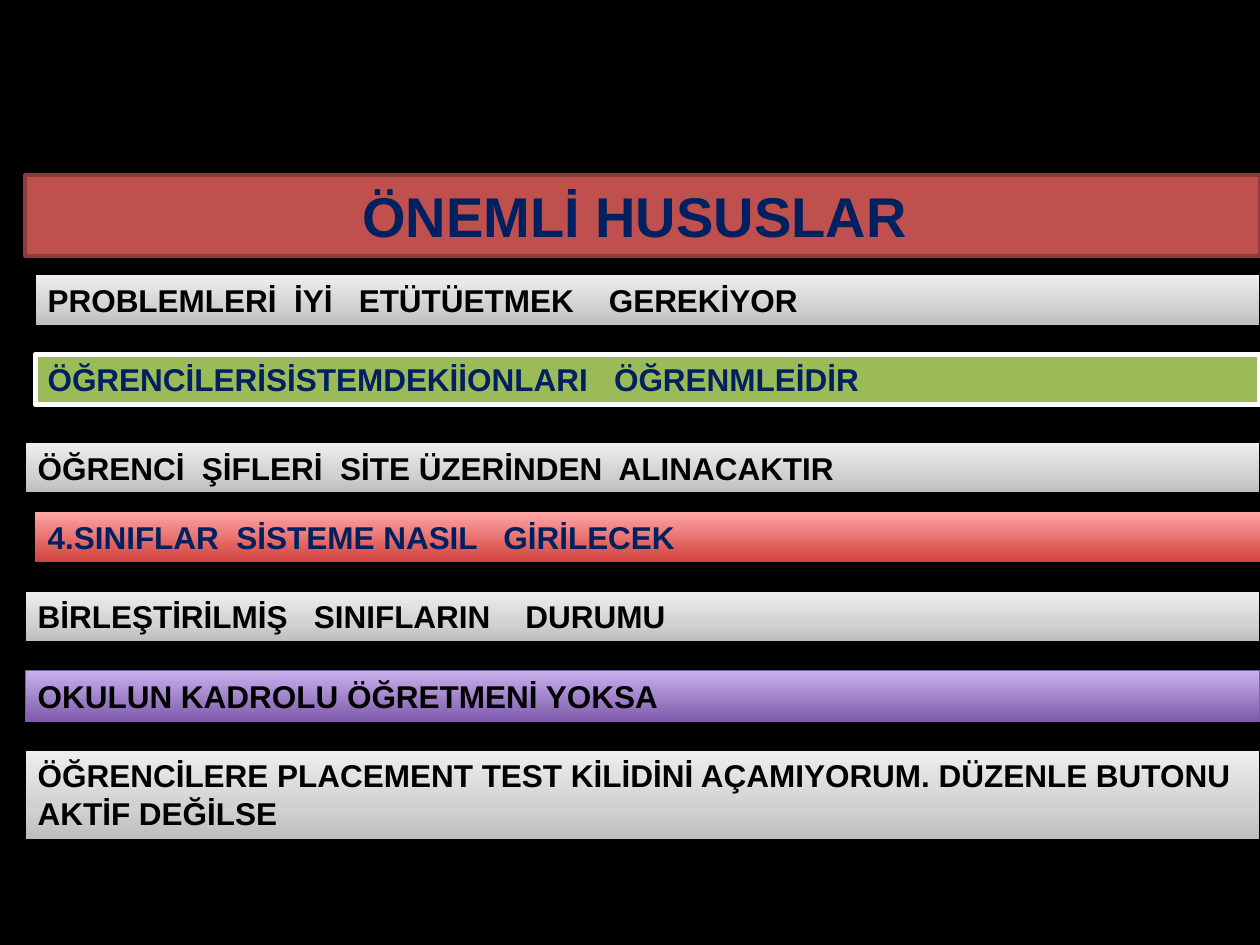
"""Build a slide of stacked banner rows under a title bar."""
from copy import deepcopy

from pptx import Presentation
from pptx.dml.color import RGBColor
from pptx.enum import shapes, text
from pptx.oxml.ns import qn
from pptx.util import Cm, Pt

BLACK = RGBColor(0x00, 0x00, 0x00)
WHITE = RGBColor(0xFF, 0xFF, 0xFF)
NAVY = RGBColor(0x00, 0x20, 0x60)
BRICK = RGBColor(0xC0, 0x50, 0x4D)
RUST = RGBColor(0x8E, 0x3B, 0x39)
GREEN = RGBColor(0x9B, 0xBB, 0x59)
PLUM = RGBColor(0x7D, 0x60, 0xA0)
GREYS = [(0, RGBColor(0xBD, 0xBD, 0xBD)), (0.35, RGBColor(0xD1, 0xD1, 0xD1)),
         (1, RGBColor(0xEE, 0xEE, 0xEE))]
REDS = [(0, RGBColor(0xD1, 0x40, 0x3C)), (1, RGBColor(0xFF, 0xA6, 0xA5))]
MAUVES = [(0, RGBColor(0x7F, 0x5B, 0xAB)), (1, RGBColor(0xC8, 0xB0, 0xED))]

WIDE, HIGH = 25.4, 19.05
EDGE, INSET = 0.51, 0.71
ROW, TALL = 1.02, 1.8

TITLE = "ÖNEMLİ HUSUSLAR "
GREY = dict(fill=GREYS, line=BLACK)
ROWS = [
    ("PROBLEMLERİ  İYİ   ETÜTÜETMEK    GEREKİYOR", INSET, 5.54, GREY),
    ("ÖĞRENCİLERİSİSTEMDEKİİONLARI   ÖĞRENMLEİDİR", INSET, 7.14,
     dict(fill=GREEN, line=WHITE, weight=3, color=NAVY)),
    ("ÖĞRENCİ  ŞİFLERİ  SİTE ÜZERİNDEN  ALINACAKTIR", EDGE, 8.92, GREY),
    ("4.SINIFLAR  SİSTEME NASIL   GİRİLECEK", INSET, 10.32,
     dict(fill=REDS, color=NAVY)),
    ("BİRLEŞTİRİLMİŞ   SINIFLARIN    DURUMU", EDGE, 11.92, GREY),
    ("OKULUN KADROLU ÖĞRETMENİ YOKSA", EDGE, 13.52,
     dict(fill=MAUVES, line=PLUM)),
    ("ÖĞRENCİLERE PLACEMENT TEST KİLİDİNİ AÇAMIYORUM. DÜZENLE BUTONU "
     "AKTİF DEĞİLSE", EDGE, 15.12, dict(GREY, high=TALL)),
]


def blend(fill, stops):
    """Fill with a gradient that runs from the bottom up."""
    fill.gradient()
    fill.gradient_angle = 90
    items = fill._xPr.find(qn("a:gradFill")).find(qn("a:gsLst"))
    while len(items) < len(stops):
        items.append(deepcopy(items[0]))
    for stop, (place, color) in zip(fill.gradient_stops, stops):
        stop.position = place
        stop.color.rgb = color


def banner(slide, words, left, top, *, fill, line=None, weight=0.75,
           high=ROW, size=18, color=BLACK, align=text.PP_ALIGN.LEFT):
    """Add a bar that reaches the right edge of the slide."""
    bar = slide.shapes.add_shape(shapes.MSO_SHAPE.RECTANGLE, Cm(left), Cm(top),
                                 Cm(WIDE - left), Cm(high))
    bar.shadow.inherit = False
    if isinstance(fill, list):
        blend(bar.fill, fill)
    else:
        bar.fill.solid()
        bar.fill.fore_color.rgb = fill
    if line is None:
        bar.line.fill.background()
    else:
        bar.line.color.rgb = line
        bar.line.width = Pt(weight)
    frame = bar.text_frame
    frame.word_wrap = True
    frame.auto_size = text.MSO_AUTO_SIZE.SHAPE_TO_FIT_TEXT
    frame.vertical_anchor = text.MSO_ANCHOR.TOP
    para = frame.paragraphs[0]
    para.alignment = align
    run = para.add_run()
    run.text = words
    font = run.font
    font.name, font.size, font.bold = "Arial", Pt(size), True
    font.color.rgb = color


def main():
    """Lay out the slide and save it."""
    deck = Presentation()
    deck.slide_width, deck.slide_height = Cm(WIDE), Cm(HIGH)
    slide = deck.slides.add_slide(deck.slide_layouts[6])
    back = slide.background.fill
    back.solid()
    back.fore_color.rgb = BLACK
    banner(slide, TITLE, EDGE, 3.53, fill=BRICK, line=RUST, weight=2,
           high=1.63, size=32, color=NAVY, align=text.PP_ALIGN.CENTER)
    for words, left, top, look in ROWS:
        banner(slide, words, left, top, **look)
    deck.save("out.pptx")


if __name__ == "__main__":
    main()
